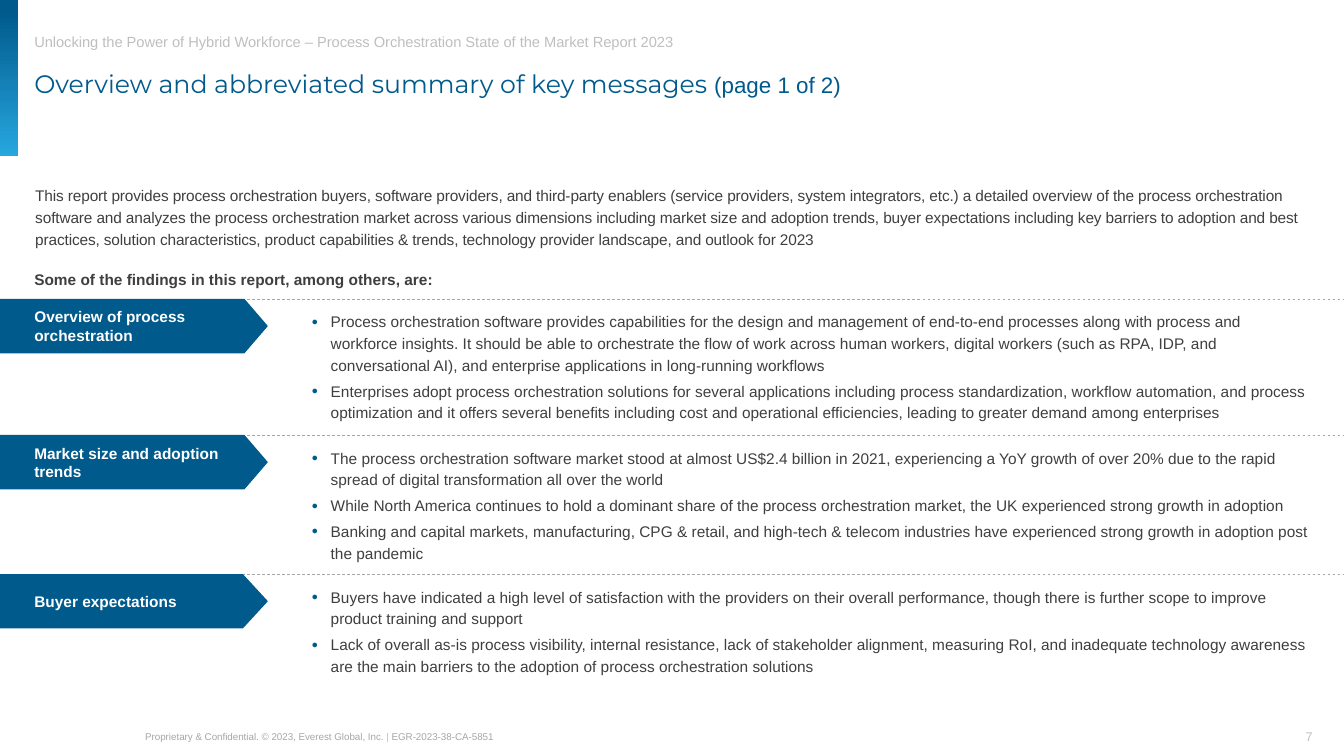
from lxml import etree
from pptx import Presentation
from pptx.dml.color import RGBColor
from pptx.enum.dml import MSO_LINE
from pptx.enum.shapes import MSO_CONNECTOR, MSO_SHAPE
from pptx.enum.text import MSO_ANCHOR as Anchor, PP_ALIGN as Align
from pptx.oxml.ns import qn
from pptx.util import Inches, Pt

BLUE = RGBColor(0x00, 0x5A, 0x8C)
LIGHT_BLUE = RGBColor(0x27, 0xA7, 0xDF)
DARK = RGBColor(0x3F, 0x3F, 0x3F)
GRAY = RGBColor(0xA6, 0xA6, 0xA6)
PALE_GRAY = RGBColor(0xBF, 0xBF, 0xBF)
WHITE = RGBColor(0xFF, 0xFF, 0xFF)

# Content
REPORT = "Unlocking the Power of Hybrid Workforce – Process Orchestration State of the Market Report 2023"
TITLE = [("Overview and abbreviated summary of key messages ", 18, "Montserrat"),
         ("(page 1 of 2)", 16, "Arial")]
INTRO = (
    "This report provides process orchestration buyers, software providers, and third-party enablers "
    "(service providers, system integrators, etc.) a detailed overview of the process orchestration "
    "software and analyzes the process orchestration market across various dimensions including market "
    "size and adoption trends, buyer expectations including key barriers to adoption and best practices, "
    "solution characteristics, product capabilities & trends, technology provider landscape, and outlook "
    "for 2023")
LEAD = "Some of the findings in this report, among others, are:"
FOOTER = [("Proprietary & Confidential. © 2023, Everest Global, Inc. ", GRAY),
          ("| ", PALE_GRAY), ("EGR-2023-38-CA-5851", GRAY)]
PAGE = "7"

# Each section: top, arrow point, text height, heading, findings
SECTIONS = [
    (2.97, 0.43, 1.11, "Overview of process orchestration", [
        "Process orchestration software provides capabilities for the design and management of end-to-end "
        "processes along with process and workforce insights. It should be able to orchestrate the flow of "
        "work across human workers, digital workers (such as RPA, IDP, and conversational AI), and "
        "enterprise applications in long-running workflows",
        "Enterprises adopt process orchestration solutions for several applications including process "
        "standardization, workflow automation, and process optimization and it offers several benefits "
        "including cost and operational efficiencies, leading to greater demand among enterprises"]),
    (4.32, 0.43, 1.41, "Market size and adoption trends", [
        "The process orchestration software market stood at almost US$2.4 billion in 2021, experiencing a "
        "YoY growth of over 20% due to the rapid spread of digital transformation all over the world",
        "While North America continues to hold a dominant share of the process orchestration market, the "
        "UK experienced strong growth in adoption",
        "Banking and capital markets, manufacturing, CPG & retail, and high-tech & telecom industries have "
        "experienced strong growth in adoption post the pandemic"]),
    (5.7, 0.46, 1.15, "Buyer expectations", [
        "Buyers have indicated a high level of satisfaction with the providers on their overall "
        "performance, though there is further scope to improve product training and support",
        "Lack of overall as-is process visibility, internal resistance, lack of stakeholder alignment, "
        "measuring RoI, and inadequate technology awareness are the main barriers to the adoption of "
        "process orchestration solutions"]),
]
SLIDE_WIDTH = 13.33
MARGIN = 0.34
LINE_SPACING = 1.17


def style(run, size, color, bold=False, name="Arial"):
    run.font.size, run.font.name, run.font.bold = Pt(size), name, bold
    run.font.color.rgb = color


def prepare(frame, anchor=Anchor.TOP, wrap=True):
    frame.margin_left = frame.margin_top = frame.margin_right = frame.margin_bottom = 0
    frame.vertical_anchor, frame.word_wrap = anchor, wrap


def add_text(slide, box, text, size, color, bold=False, anchor=Anchor.TOP, wrap=True):
    frame = slide.shapes.add_textbox(*map(Inches, box)).text_frame
    prepare(frame, anchor, wrap)
    frame.text = text
    for paragraph in frame.paragraphs:
        style(paragraph.runs[0], size, color, bold)
    return frame


def add_bullet(paragraph):
    properties = paragraph._p.get_or_add_pPr()
    properties.set("marL", str(Inches(0.19)))
    properties.set("indent", str(Inches(-0.19)))
    color = etree.SubElement(properties, qn("a:buClr"))
    etree.SubElement(color, qn("a:srgbClr"), val=str(BLUE))
    etree.SubElement(properties, qn("a:buSzPct"), val="70000")
    etree.SubElement(properties, qn("a:buFont"), typeface="Arial")
    etree.SubElement(properties, qn("a:buChar"), char="●")


def add_section(slide, top, point, height, heading, findings):
    # Dashed divider
    y = Inches(top)
    divider = slide.shapes.add_connector(
        MSO_CONNECTOR.STRAIGHT, Inches(0.32), y, Inches(SLIDE_WIDTH), y)
    divider.line.color.rgb = GRAY
    divider.line.width = Pt(0.5)
    divider.line.dash_style = MSO_LINE.DASH
    etree.SubElement(divider._element.spPr, qn("a:effectLst"))

    # Heading arrow
    arrow = slide.shapes.add_shape(MSO_SHAPE.PENTAGON, 0, y, Inches(2.65), Inches(0.53))
    arrow.adjustments[0] = point
    arrow.shadow.inherit = False
    arrow.fill.solid()
    arrow.fill.fore_color.rgb = arrow.line.color.rgb = BLUE
    arrow.line.width = Pt(0.75)
    frame = arrow.text_frame
    prepare(frame, Anchor.MIDDLE)
    frame.margin_left = Inches(MARGIN)
    frame.margin_right = Inches(0.05)
    frame.text = heading
    frame.paragraphs[0].alignment = Align.LEFT
    style(frame.paragraphs[0].runs[0], 11, WHITE, True)

    # Findings
    frame = add_text(slide, (3.09, top + 0.1, 9.93, height), "\n".join(findings), 11, DARK)
    for paragraph in frame.paragraphs:
        paragraph.line_spacing, paragraph.space_after = LINE_SPACING, Pt(3)
        add_bullet(paragraph)


def main():
    presentation = Presentation()
    presentation.slide_width, presentation.slide_height = Inches(SLIDE_WIDTH), Inches(7.5)
    slide = presentation.slides.add_slide(presentation.slide_layouts[5])

    # Gradient side bar
    bar = slide.shapes.add_shape(MSO_SHAPE.RECTANGLE, 0, 0, Inches(0.18), Inches(1.55))
    bar.shadow.inherit = False
    bar.line.fill.background()
    bar.fill.gradient()
    bar.fill.gradient_angle = 270
    for stop, position, color in zip(bar.fill.gradient_stops, (0.07, 1), (BLUE, LIGHT_BLUE)):
        stop.position, stop.color.rgb = position, color

    # Title and report name
    add_text(slide, (MARGIN, 0.33, 12.7, 0.18), REPORT, 10.5, PALE_GRAY)
    title = slide.shapes.title
    title.left, title.top, title.width, title.height = map(Inches, (MARGIN, 0.68, 12.68, 0.3))
    prepare(title.text_frame)
    paragraph = title.text_frame.paragraphs[0]
    paragraph.alignment = Align.LEFT
    for text, size, name in TITLE:
        run = paragraph.add_run()
        run.text = text
        style(run, size, BLUE, name=name)

    # Introduction
    intro = add_text(slide, (MARGIN, 1.82, 12.7, 0.63), INTRO, 11, DARK).paragraphs[0]
    intro.line_spacing = LINE_SPACING
    intro._p.get_or_add_pPr().set("marL", str(Inches(0.01)))
    intro.runs[0]._r.get_or_add_rPr().set("spc", "-10")
    add_text(slide, (MARGIN, 2.67, 3.98, 0.19), LEAD, 11, DARK, True, Anchor.BOTTOM, False)

    for section in SECTIONS:
        add_section(slide, *section)

    # Footer
    frame = add_text(slide, (1.44, 7.22, 4.73, 0.18), FOOTER[0][0], 7, FOOTER[0][1],
                     anchor=Anchor.MIDDLE)
    for text, color in FOOTER[1:]:
        run = frame.paragraphs[0].add_run()
        run.text = text
        style(run, 7, color)
    page = add_text(slide, (9.91, 7.23, 3.11, 0.16), PAGE, 9, PALE_GRAY)
    page.paragraphs[0].alignment = Align.RIGHT

    presentation.save("out.pptx")


if __name__ == "__main__":
    main()
